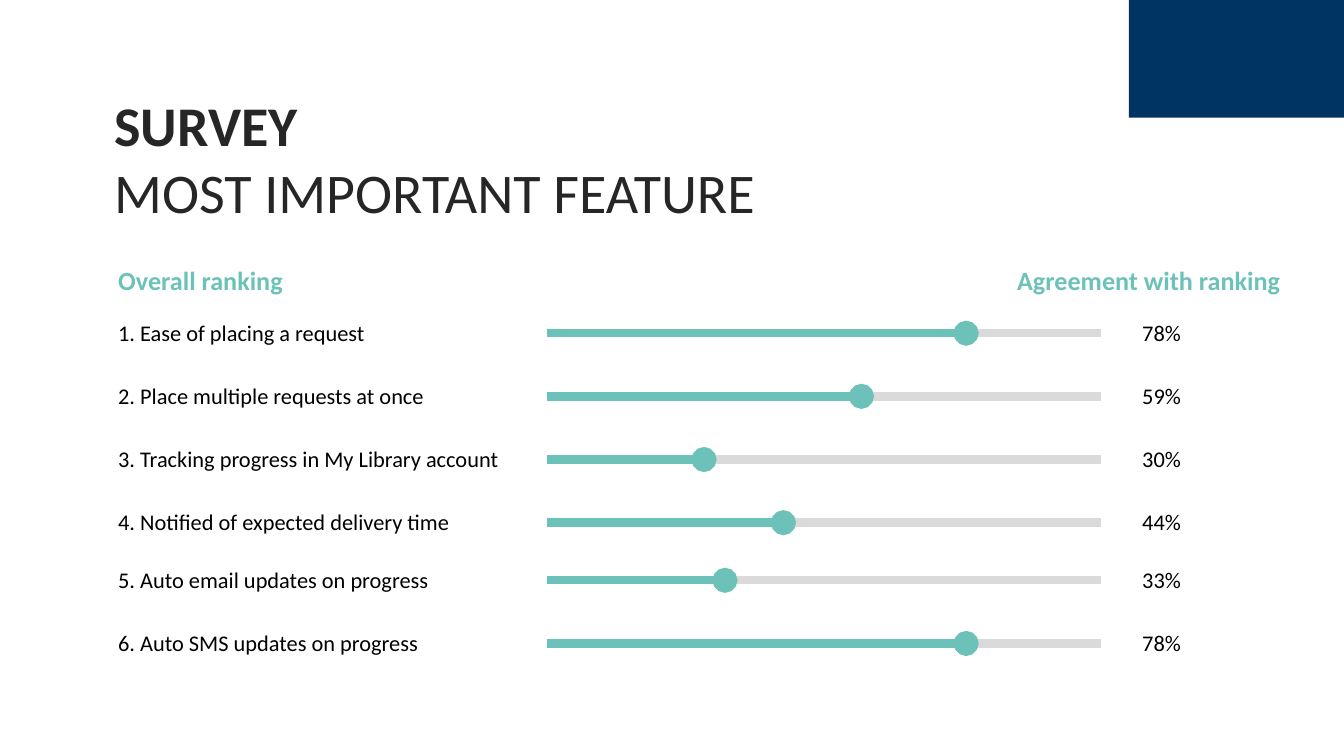
from lxml import etree
from pptx import Presentation
from pptx.dml.color import RGBColor
from pptx.enum.shapes import MSO_CONNECTOR, MSO_SHAPE
from pptx.enum.text import MSO_ANCHOR, MSO_AUTO_SIZE, PP_ALIGN
from pptx.oxml.ns import qn
from pptx.util import Pt

STRAIGHT = MSO_CONNECTOR.STRAIGHT
RECTANGLE = MSO_SHAPE.RECTANGLE
TOP = MSO_ANCHOR.TOP
LEFT = PP_ALIGN.LEFT
NO_FIT = MSO_AUTO_SIZE.NONE
FIT_SHAPE = MSO_AUTO_SIZE.SHAPE_TO_FIT_TEXT

FONT = "Calibri"
TEAL = "6CC2B8"
GREY = "DADADA"
NAVY = "003562"
CHARCOAL = "262626"
BLACK = "000000"

MARGIN = 56.2
TRACK_LEFT = 293
TRACK_WIDTH = 296.7
SCORE_LEFT = 604.8
ROW_PITCH = 33.84
LABEL_HEIGHT = 21.8

RANKING_GROUPS = [
    (178.5, [
        ("1. Ease of placing a request", 153.4, "78%", 224.6),
        ("2. Place multiple requests at once", 185.8, "59%", 168.5),
        ("3. Tracking progress in My Library account", 221.8, "30%", 84.2),
        ("4. Notified of expected delivery time", 200.2, "44%", 126.7),
    ]),
    (310.9, [
        ("5. Auto email updates on progress", 187.9, "33%", 95.4),
        ("6. Auto SMS updates on progress", 184.3, "78%", 224.6),
    ]),
]


def color(hex_code):
    return RGBColor.from_string(hex_code)


def format_text(paragraph, text, size=12, fill=BLACK, bold=False):
    paragraph.alignment = LEFT
    run = paragraph.add_run()
    run.text = text
    run.font.name = FONT
    run.font.size = Pt(size)
    run.font.bold = bold
    run.font.color.rgb = color(fill)


def add_label(slide, text, left, top, width, height=LABEL_HEIGHT, wrap=False, **style):
    label = slide.shapes.add_textbox(Pt(left), Pt(top), Pt(width), Pt(height))
    frame = label.text_frame
    frame.word_wrap = wrap
    frame.auto_size = FIT_SHAPE
    format_text(frame.paragraphs[0], text, **style)


def add_bar(slide, y, length, stroke, knob=False):
    bar = slide.shapes.add_connector(
        STRAIGHT, Pt(TRACK_LEFT), Pt(y), Pt(TRACK_LEFT + length), Pt(y))
    bar.line.color.rgb = color(stroke)
    bar.line.width = Pt(4.5)
    if knob:
        etree.SubElement(bar.line._get_or_add_ln(), qn("a:tailEnd"), type="oval")
    etree.SubElement(bar._element.spPr, qn("a:effectLst"))


def add_corner(slide):
    corner = slide.shapes.add_shape(RECTANGLE, Pt(604.8), Pt(0), Pt(115.2), Pt(63))
    corner.shadow.inherit = False
    corner.fill.solid()
    corner.fill.fore_color.rgb = color(NAVY)
    corner.line.fill.background()


def set_title(slide):
    title = slide.shapes.title
    title.left, title.top = Pt(MARGIN), Pt(45.4)
    title.width, title.height = Pt(533.5), Pt(70.6)
    frame = title.text_frame
    frame.auto_size = NO_FIT
    frame.word_wrap = True
    frame.vertical_anchor = TOP
    frame.margin_left = frame.margin_right = Pt(5)
    frame.margin_top = frame.margin_bottom = Pt(2.9)
    format_text(frame.paragraphs[0], "SURVEY", size=30, fill=CHARCOAL, bold=True)
    format_text(frame.add_paragraph(), "MOST IMPORTANT FEATURE", size=30, fill=CHARCOAL)


def add_ranking_row(slide, y, feature, feature_width, score, score_length):
    label_top = y - 11.3
    add_bar(slide, y, TRACK_WIDTH, GREY)
    add_bar(slide, y, score_length, TEAL, knob=True)
    add_label(slide, feature, MARGIN, label_top, feature_width)
    add_label(slide, score, SCORE_LEFT, label_top, 35.3)


def main():
    deck = Presentation()
    deck.slide_width, deck.slide_height = Pt(720), Pt(405)
    slide = deck.slides.add_slide(deck.slide_layouts[5])
    add_corner(slide)
    set_title(slide)
    for first_y, rows in RANKING_GROUPS:
        for index, row in enumerate(rows):
            add_ranking_row(slide, first_y + index * ROW_PITCH, *row)
    heading = {"height": 24.2, "size": 14, "fill": TEAL, "bold": True}
    add_label(slide, "Overall ranking", MARGIN, 138.2, 123.8, wrap=True, **heading)
    add_label(slide, "Agreement with ranking", 537.8, 138.2, 157, **heading)
    deck.save("out.pptx")


if __name__ == "__main__":
    main()
